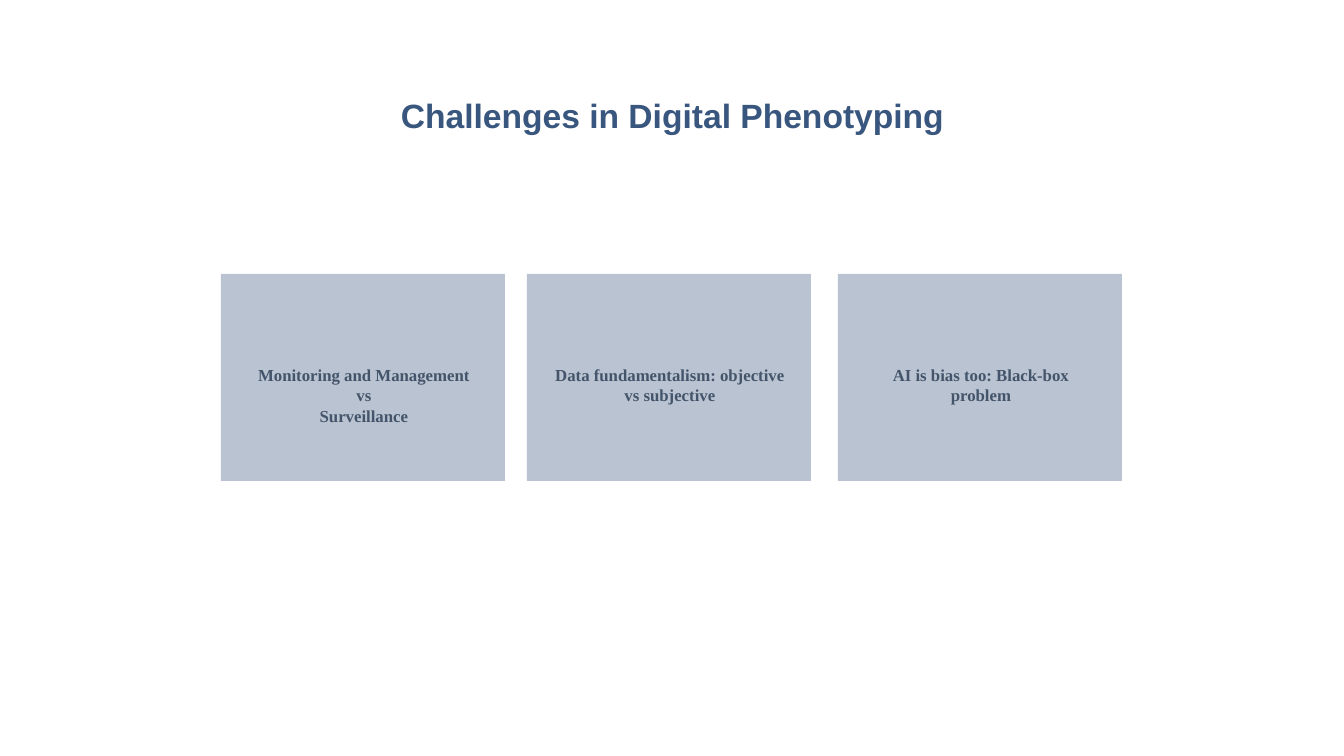
from dataclasses import dataclass

from lxml.etree import SubElement
from pptx import Presentation
from pptx.dml.color import RGBColor
from pptx.enum.shapes import MSO_SHAPE
from pptx.enum.text import MSO_ANCHOR, PP_ALIGN
from pptx.oxml.ns import qn
from pptx.slide import Slide
from pptx.text.text import TextFrame
from pptx.util import Emu, Pt

EMU_PER_PX = 914400 / 100.8
COLORS = {"title": "39577E", "card": "3D5A80", "label": "44546A"}
CARD_TOP, CARD_WIDTH, CARD_HEIGHT = 274, 284, 207
LABEL_INSET, LABEL_TOP, LABEL_WIDTH, LABEL_HEIGHT = 13, 355, 260, 45
CARD_OPACITY = 36


@dataclass(frozen=True)
class Challenge:
    left: int
    text: str


CHALLENGES = [
    Challenge(221, "Monitoring and Management\nvs\nSurveillance"),
    Challenge(527, "Data fundamentalism: objective vs subjective"),
    Challenge(838, "AI is bias too: Black-box problem"),
]


def px(length: int) -> Emu:
    return Emu(round(length * EMU_PER_PX))


def write_text(text_frame: TextFrame, text: str, font_name: str, size: int,
               color: str, margin: int) -> None:
    text_frame.text = text
    text_frame.word_wrap = True
    text_frame.vertical_anchor = MSO_ANCHOR.TOP
    text_frame.margin_left = text_frame.margin_right = px(10)
    text_frame.margin_top = text_frame.margin_bottom = px(margin)
    for paragraph in text_frame.paragraphs:
        paragraph.alignment = PP_ALIGN.CENTER
        for run in paragraph.runs:
            run.font.name = font_name
            run.font.size = Pt(size)
            run.font.bold = True
            run.font.color.rgb = RGBColor.from_string(COLORS[color])


def add_title(slide: Slide, text: str) -> None:
    title = slide.shapes.title
    title.left, title.top, title.width, title.height = map(px, (87, 90, 1171, 50))
    write_text(title.text_frame, text, "Arial", 24, "title", 5)


def add_challenge(slide: Slide, challenge: Challenge) -> None:
    card = slide.shapes.add_shape(
        MSO_SHAPE.RECTANGLE, px(challenge.left), px(CARD_TOP),
        px(CARD_WIDTH), px(CARD_HEIGHT))
    card.shadow.inherit = False
    card.line.fill.background()
    card.fill.solid()
    card.fill.fore_color.rgb = RGBColor.from_string(COLORS["card"])
    fill_color = card.fill._xPr.find(qn("a:solidFill")).find(qn("a:srgbClr"))
    SubElement(fill_color, qn("a:alpha")).set("val", str(CARD_OPACITY * 1000))

    label = slide.shapes.add_textbox(
        px(challenge.left + LABEL_INSET), px(LABEL_TOP),
        px(LABEL_WIDTH), px(LABEL_HEIGHT))
    write_text(label.text_frame, challenge.text, "Times New Roman", 12, "label", 10)


def main() -> None:
    presentation = Presentation()
    presentation.slide_width, presentation.slide_height = px(1344), px(756)
    slide = presentation.slides.add_slide(presentation.slide_layouts[5])
    add_title(slide, "Challenges in Digital Phenotyping")
    for challenge in CHALLENGES:
        add_challenge(slide, challenge)
    presentation.save("out.pptx")


if __name__ == "__main__":
    main()
